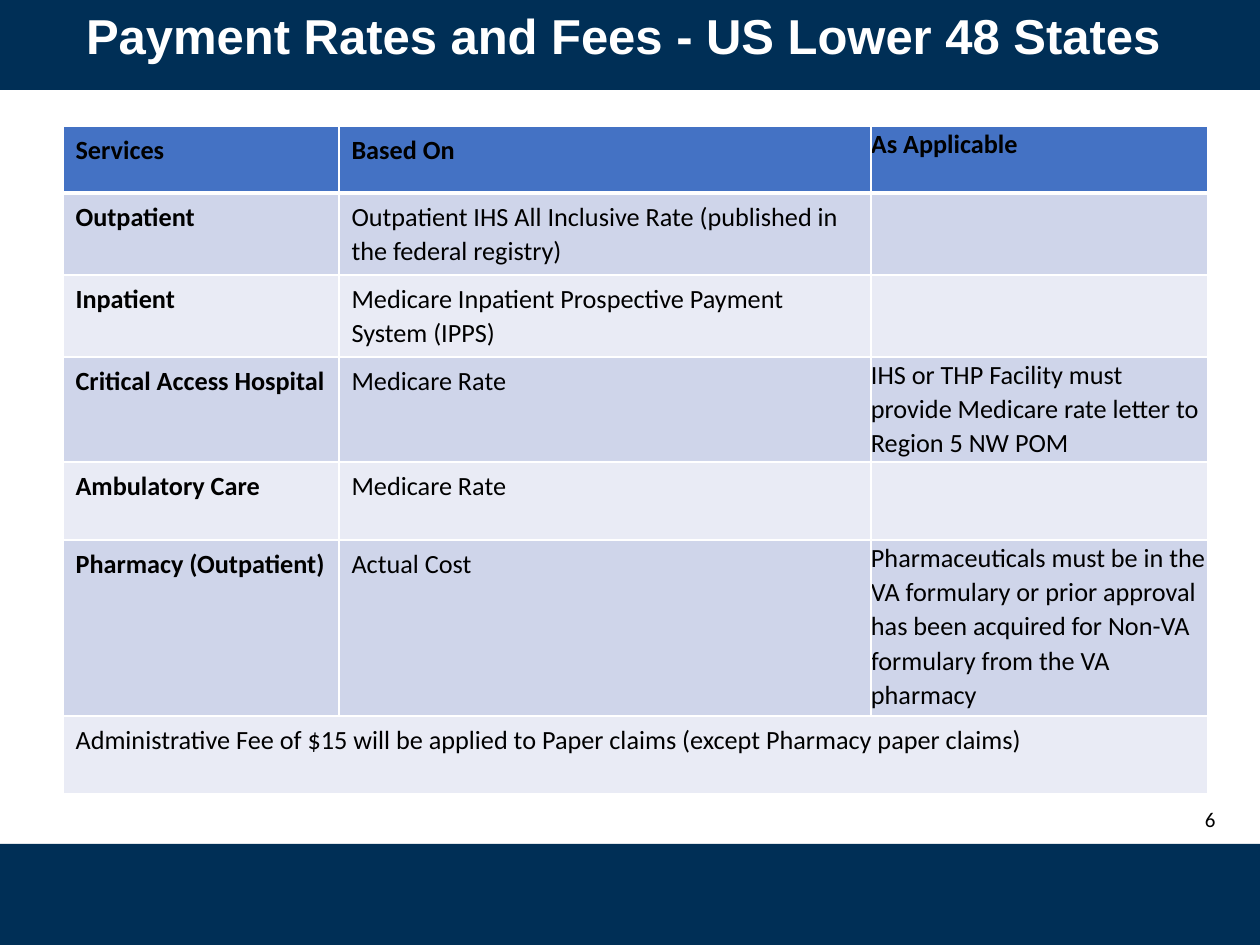
from lxml.etree import SubElement
from pptx import Presentation
from pptx.dml.color import RGBColor
from pptx.enum.shapes import MSO_SHAPE
from pptx.enum.text import MSO_ANCHOR, PP_ALIGN
from pptx.oxml.ns import qn
from pptx.util import Emu, Pt

COLORS = {
    "navy": "002F56",
    "white": "FFFFFF",
    "black": "000000",
    "header": "4472C4",
    "odd": "CFD5EA",
    "even": "E9EBF5",
}
COL_WIDTHS = [276, 532, 337]
ROW_HEIGHTS = [67, 82, 82, 105, 78, 176, 78]
ROWS = [
    ["Services", "Based On", "As Applicable"],
    ["Outpatient", "Outpatient IHS All Inclusive Rate (published in the federal registry)", ""],
    ["Inpatient", "Medicare Inpatient Prospective Payment System (IPPS)", ""],
    ["Critical Access Hospital", "Medicare Rate",
     "IHS or THP Facility must provide Medicare rate letter to Region 5 NW POM"],
    ["Ambulatory Care", "Medicare Rate", ""],
    ["Pharmacy (Outpatient)", "Actual Cost",
     "Pharmaceuticals must be in the VA formulary or prior approval has been "
     "acquired for Non-VA formulary from the VA pharmacy"],
    ["Administrative Fee of $15 will be applied to Paper claims (except Pharmacy paper claims)", "", ""],
]


def px(n):
    return Emu(round(n * 914400 / 126))


def rgb(name):
    return RGBColor.from_string(COLORS[name])


def style(p, name, size, color, bold=False):
    p.font.name = name
    p.font.size = Pt(size)
    p.font.bold = bold
    p.font.color.rgb = rgb(color)
    for r in p.runs:
        r.font.name = name
        r.font.size = Pt(size)
        r.font.bold = bold
        r.font.color.rgb = rgb(color)


def add_band(s, top, height):
    sp = s.shapes.add_shape(MSO_SHAPE.RECTANGLE, 0, px(top), px(1260), px(height))
    sp.shadow.inherit = False
    sp.fill.solid()
    sp.fill.fore_color.rgb = rgb("navy")
    sp.line.fill.background()


def add_text(s, box, text, align, **font):
    tf = s.shapes.add_textbox(*map(px, box)).text_frame
    tf.word_wrap = True
    tf.vertical_anchor = MSO_ANCHOR.MIDDLE
    p = tf.paragraphs[0]
    p.text = text
    p.alignment = align
    style(p, **font)


def set_borders(cell, top, bottom):
    tcPr = cell._tc.get_or_add_tcPr()
    for side, width in (("L", 1), ("R", 1), ("T", top), ("B", bottom)):
        ln = SubElement(tcPr, qn(f"a:ln{side}"), w=str(Pt(width)))
        fill = SubElement(ln, qn("a:solidFill"))
        SubElement(fill, qn("a:srgbClr"), val=COLORS["white"])


def fill_cell(cell, text, row, col):
    set_borders(cell, 3 if row == 1 else 1, 3 if row == 0 else 1)
    cell.fill.solid()
    cell.fill.fore_color.rgb = rgb("header" if row == 0 else "odd" if row % 2 else "even")
    cell.margin_left = cell.margin_right = px(0 if col == 2 else 12.6)
    cell.margin_top = cell.margin_bottom = px(0 if col == 2 else 6.3)
    p = cell.text_frame.paragraphs[0]
    p.text = text
    p.line_spacing = 1.07
    bold = row == 0 or (col == 0 and row < len(ROWS) - 1)
    style(p, "Calibri", 15, "black", bold)


def add_rates_table(s, left, top):
    table = s.shapes.add_table(len(ROWS), len(COL_WIDTHS), px(left), px(top),
                               px(sum(COL_WIDTHS)), px(sum(ROW_HEIGHTS))).table
    for column, width in zip(table.columns, COL_WIDTHS):
        column.width = px(width)
    for table_row, height in zip(table.rows, ROW_HEIGHTS):
        table_row.height = px(height)
    for row, texts in enumerate(ROWS):
        for col, text in enumerate(texts):
            fill_cell(table.cell(row, col), text, row, col)
    last = len(ROWS) - 1
    table.cell(last, 0).merge(table.cell(last, 2))


def main():
    prs = Presentation()
    prs.slide_width, prs.slide_height = px(1260), px(945)
    s = prs.slides.add_slide(prs.slide_layouts[6])
    add_band(s, -10, 100)
    add_band(s, 844, 101)
    add_text(s, (1160, 794, 68, 50), "6", PP_ALIGN.RIGHT,
             name="Calibri", size=12, color="black")
    add_text(s, (0, -44, 1260, 158), "Payment Rates and Fees - US Lower 48 States ",
             PP_ALIGN.CENTER, name="Arial", size=28, color="white", bold=True)
    add_rates_table(s, 63, 126)
    prs.save("out.pptx")


if __name__ == "__main__":
    main()
